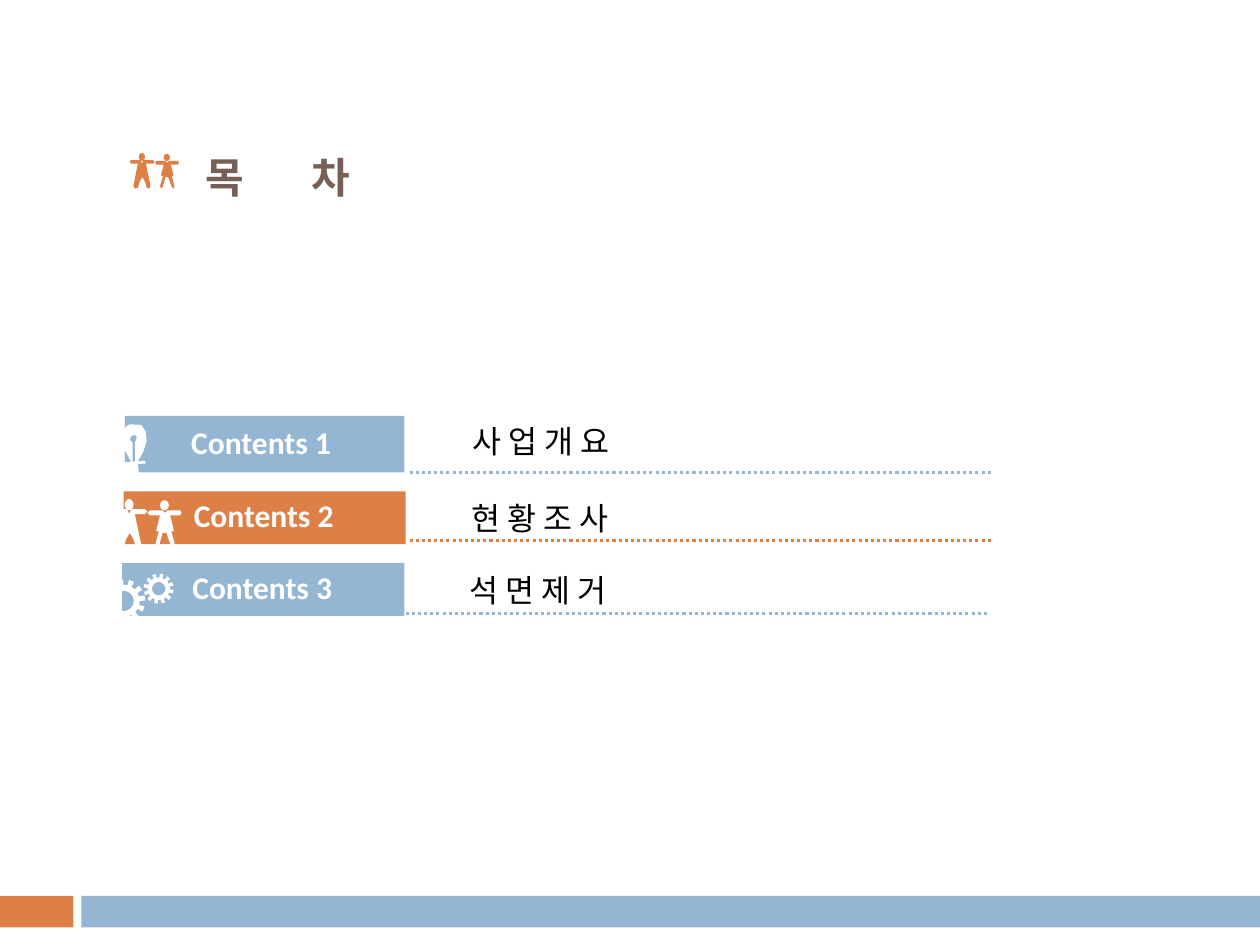
from math import cos, radians, sin

from lxml import etree
from pptx import Presentation
from pptx.dml.color import RGBColor
from pptx.enum.dml import MSO_LINE
from pptx.enum.shapes import MSO_CONNECTOR, MSO_SHAPE
from pptx.enum.text import MSO_ANCHOR, PP_ALIGN
from pptx.oxml.ns import qn
from pptx.util import Pt

RECT, OVAL = MSO_SHAPE.RECTANGLE, MSO_SHAPE.OVAL
STRAIGHT, DOTTED = MSO_CONNECTOR.STRAIGHT, MSO_LINE.ROUND_DOT
LEFT, CENTER = PP_ALIGN.LEFT, PP_ALIGN.CENTER
TOP, MIDDLE = MSO_ANCHOR.TOP, MSO_ANCHOR.MIDDLE

BLUE, ORANGE, WHITE, BROWN, BLACK = "94B6D2", "DD8047", "FFFFFF", "775F55", "000000"
KOREAN = "Noto Sans CJK KR"
LABEL = {"name": "Calibri", "size": Pt(18), "bold": True}
TOPIC = {"name": KOREAN, "size": Pt(18)}
HEADING = {"name": KOREAN, "size": Pt(24), "bold": True}

MAN = [(15, 0), (14, 3), (13, 3), (12, 0), (1, 0), (0, 2), (1, 4), (9, 4),
       (4, 29), (6, 32), (9, 31), (11, 24), (14, 19), (17, 24), (19, 31),
       (22, 32), (23, 28), (18, 4), (26, 4), (28, 2), (26, 0)]
WOMAN = [(40, 1), (42, 3), (44, 1), (54, 1), (55, 3), (54, 5), (46, 5),
         (49, 17), (47, 18), (50, 29), (49, 32), (47, 30), (43, 19), (40, 19),
         (37, 30), (35, 32), (34, 29), (37, 18), (35, 17), (38, 5), (30, 5),
         (28, 3), (30, 1)]
HEADS = [(10, -8, 7, 9), (38, -7, 7, 8)]
PEN_PARTS = [
    [(1, 39), (4, 30), (16, 34), (12, 43)],
    [(8, 31), (12, 33), (15, 33), (20, 29), (24, 22), (24, 15), (23, 4),
     (24, 1), (16, 19), (17, 22), (15, 24), (12, 24), (11, 22), (13, 19),
     (14, 19), (22, 0), (19, 3), (11, 9), (5, 16), (3, 23), (4, 29)],
    [(0, 28), (1, 27), (19, 34), (20, 35), (19, 36), (0, 29)],
]

ROWS = [
    {"color": BLUE, "bar": (71.3, 237.6, 159.8, 32.4),
     "label": ("Contents 1", 83.5, 238.3), "topic": ("사 업 개 요", 262.8, 237.6),
     "rule": (234, 270)},
    {"color": ORANGE, "bar": (70.6, 280.8, 161.3, 30.2),
     "label": ("Contents 2", 85, 280.1), "topic": ("현 황 조 사", 262.1, 281.5),
     "rule": (234, 308.9)},
    {"color": BLUE, "bar": (69.8, 321.8, 161.3, 30.2),
     "label": ("Contents 3", 84.2, 321.1), "topic": ("석 면 제 거", 261.4, 322.6),
     "rule": (231.8, 350.6)},
]


def rgb(color):
    """Turn a hex string into a colour value."""
    return RGBColor.from_string(color)


def paint(shape, color):
    """Give a shape a plain fill with no line or shadow."""
    shape.shadow.inherit = False
    shape.fill.solid()
    shape.fill.fore_color.rgb = rgb(color)
    shape.line.fill.background()


def add_block(slide, kind, box, color):
    """Draw a filled preset shape."""
    paint(slide.shapes.add_shape(kind, *map(Pt, box)), color)


def add_outline(slide, contours, color, left, top, scale=0.72, rotation=0):
    """Draw closed contours as one filled freeform."""
    builder = None
    for contour in contours:
        first, *rest = [(x * scale * 100, y * scale * 100) for x, y in contour]
        if builder is None:
            builder = slide.shapes.build_freeform(*first, scale=Pt(0.01))
        else:
            builder.move_to(*first)
        builder.add_line_segments(rest, close=True)
    shape = builder.convert_to_shape(Pt(left), Pt(top))
    shape.rotation = rotation
    paint(shape, color)


def add_couple(slide, left, top, scale, color):
    """Draw the man and woman icon."""
    for figure in (MAN, WOMAN):
        add_outline(slide, [figure], color, left, top, scale)
    for x, y, width, height in HEADS:
        head = (left + x * scale, top + y * scale, width * scale, height * scale)
        add_block(slide, OVAL, head, color)


def add_gear(slide, center, radius, root, hole, turn):
    """Draw a gear of twelve teeth with a round hole."""
    def polar(distance, angle):
        return distance * cos(radians(angle)), distance * sin(radians(angle))

    teeth = [polar(distance, turn + 30 * tooth + offset) for tooth in range(12)
             for distance, offset in ((root, -8), (radius, -7), (radius, 7), (root, 8))]
    bore = [polar(hole, -angle) for angle in range(0, 360, 10)]
    add_outline(slide, [teeth, bore], WHITE, *center, scale=1)


def add_text(slide, text, box, color, style, align=LEFT, anchor=TOP):
    """Add a one-line text box and return its paragraph."""
    frame = slide.shapes.add_textbox(*map(Pt, box)).text_frame
    frame.word_wrap = True
    frame.vertical_anchor = anchor
    paragraph = frame.paragraphs[0]
    paragraph.alignment = align
    run = paragraph.add_run()
    run.text = text
    run.font.color.rgb = rgb(color)
    for attribute, value in style.items():
        setattr(run.font, attribute, value)
    east_asian = etree.SubElement(run.font._element, qn("a:ea"))
    east_asian.set("typeface", style["name"])
    return paragraph


def add_heading(slide):
    """Add the heading, its two syllables set apart by a tab stop."""
    paragraph = add_text(slide, "목\t차", (110.2, 84.2, 109.4, 33.8), BROWN,
                         HEADING, anchor=MIDDLE)
    stops = etree.SubElement(paragraph._p.get_or_add_pPr(), qn("a:tabLst"))
    etree.SubElement(stops, qn("a:tab"), pos=str(Pt(60.5)), algn="l")


def add_rule(slide, left, top, color):
    """Draw the dotted line under a topic."""
    rule = slide.shapes.add_connector(
        STRAIGHT, Pt(left), Pt(top), Pt(left + 333.4), Pt(top))
    rule.line.color.rgb = rgb(color)
    rule.line.width = Pt(1.75)
    rule.line.dash_style = DOTTED
    etree.SubElement(rule._element.spPr, qn("a:effectLst"))


def add_row(slide, row):
    """Draw one contents entry: bar, label, topic and rule."""
    add_block(slide, RECT, row["bar"], row["color"])
    label, left, top = row["label"]
    add_text(slide, label, (left, top, 131.4, 29), WHITE, LABEL, CENTER)
    topic, left, top = row["topic"]
    add_text(slide, topic, (left, top, 264, 29), BLACK, TOPIC)
    add_rule(slide, *row["rule"], row["color"])


def main():
    """Build the contents slide."""
    deck = Presentation()
    deck.slide_width, deck.slide_height = Pt(720), Pt(540)
    slide = deck.slides.add_slide(deck.slide_layouts[6])
    add_block(slide, RECT, (0, 512, 42, 18), ORANGE)
    add_block(slide, RECT, (46.5, 512, 673.5, 18), BLUE)
    add_couple(slide, 74.2, 91.5, 0.51, ORANGE)
    add_heading(slide)
    for row in ROWS:
        add_row(slide, row)
    for part in PEN_PARTS:
        add_outline(slide, [part], WHITE, 68.4, 241.9, rotation=156.2)
    add_couple(slide, 64.1, 290.9, 0.72, WHITE)
    add_gear(slide, (70.6, 343.4), 12.4, 9.2, 5.8, 22)
    add_gear(slide, (90.7, 336.4), 8.6, 6.4, 3.8, 11.5)
    deck.save("out.pptx")


if __name__ == "__main__":
    main()
